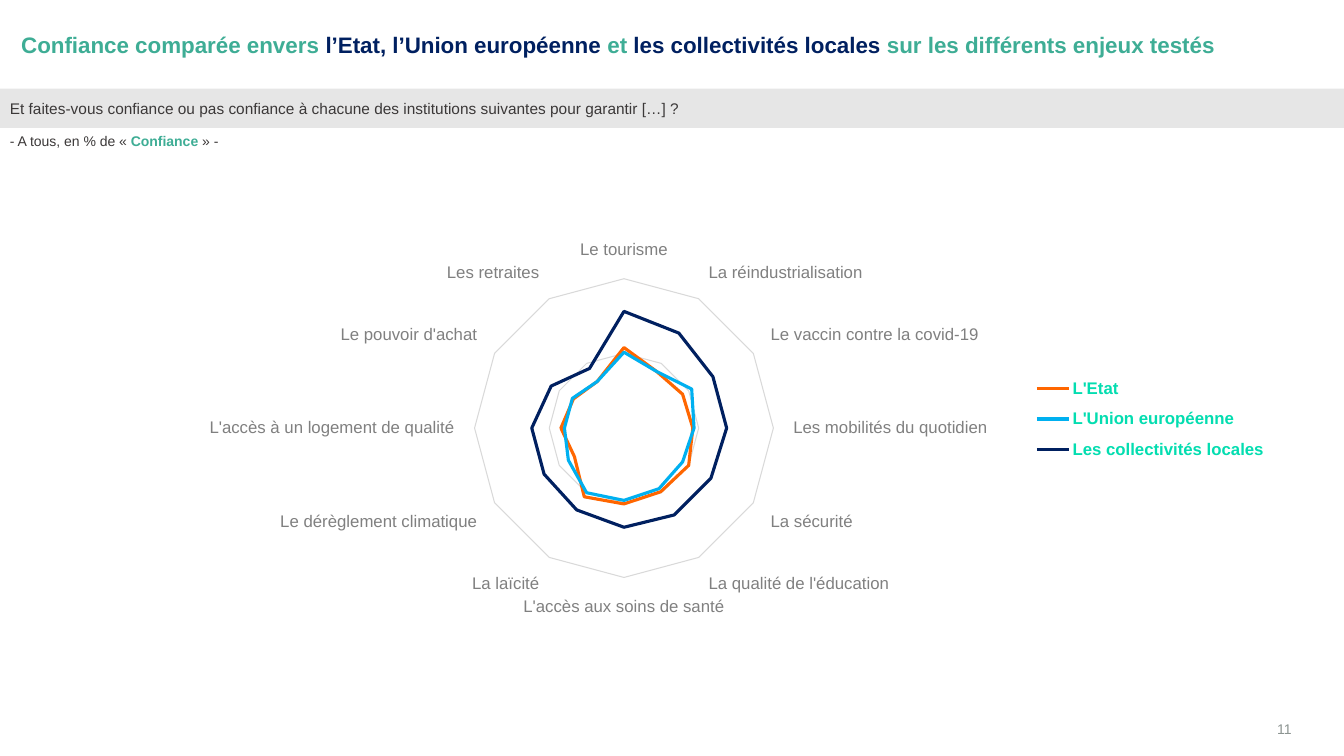
from lxml.etree import SubElement
from pptx import Presentation
from pptx.chart.data import CategoryChartData
from pptx.dml.color import RGBColor
from pptx.enum.chart import XL_CHART_TYPE, XL_LEGEND_POSITION, XL_TICK_MARK
from pptx.enum.shapes import MSO_SHAPE
from pptx.enum.text import MSO_ANCHOR, PP_ALIGN
from pptx.oxml.ns import qn
from pptx.util import Inches, Pt

FONT = "Arial"
GREEN, NAVY, DARK = "3EAD95", "002060", "3B3838"

TITLE = [
    ("Confiance comparée envers ", GREEN),
    ("l’Etat, l’Union européenne ", NAVY),
    ("et ", GREEN),
    ("les collectivités locales ", NAVY),
    ("sur les différents enjeux testés", GREEN),
]
QUESTION = "Et faites-vous confiance ou pas confiance à chacune des institutions suivantes pour garantir […] ?"
ISSUES = [
    "Le tourisme", "La réindustrialisation", "Le vaccin contre la covid-19",
    "Les mobilités du quotidien", "La sécurité", "La qualité de l'éducation",
    "L'accès aux soins de santé", "La laïcité", "Le dérèglement climatique",
    "L'accès à un logement de qualité", "Le pouvoir d'achat", "Les retraites",
]
INSTITUTIONS = [
    ("L'Etat", "FF6600", [69, 56, 58, 59, 64, 63, 65, 68, 49, 54, 50, 46]),
    ("L'Union européenne", "00B0F0", [65, 56, 67, 60, 58, 60, 62, 64, 55, 51, 51, 46]),
    ("Les collectivités locales", NAVY, [100, 94, 88, 88, 86, 86, 85, 81, 79, 79, 72, 59]),
]


def rgb(code):
    """Return the colour for a hex string."""
    return RGBColor.from_string(code)


def style(font, size, color, bold=False):
    """Format a font."""
    font.name, font.size, font.bold = FONT, Pt(size), bold
    font.color.rgb = rgb(color)


def set_frame(frame, anchor, margins):
    """Set wrapping, anchor and left, top, right, bottom margins in inches."""
    frame.word_wrap = True
    frame.vertical_anchor = anchor
    (frame.margin_left, frame.margin_top,
     frame.margin_right, frame.margin_bottom) = map(Inches, margins)


def add_runs(paragraph, pieces, size):
    """Append runs given as text, colour and weight."""
    for text, color, bold in pieces:
        run = paragraph.add_run()
        run.text = text
        style(run.font, size, color, bold)


def place_title(slide, box):
    """Fill the title placeholder with two-coloured text."""
    title = slide.shapes.title
    title.left, title.top, title.width, title.height = map(Inches, box)
    title.fill.solid()
    title.fill.fore_color.rgb = rgb("FFFFFF")
    white = title._element.spPr.find(qn("a:solidFill"))[0]
    SubElement(white, qn("a:alpha"), val="30000")
    set_frame(title.text_frame, MSO_ANCHOR.MIDDLE, (0.1, 0, 0, 0))
    heading = title.text_frame.paragraphs[0]
    heading.alignment = PP_ALIGN.LEFT
    add_runs(heading, [(text, color, True) for text, color in TITLE], 16)


def add_question(slide, box):
    """Draw the grey band with the survey question."""
    band = slide.shapes.add_shape(MSO_SHAPE.RECTANGLE, *map(Inches, box))
    band.shadow.inherit = False
    band.fill.solid()
    band.fill.fore_color.rgb = rgb("E6E6E6")
    band.line.fill.background()
    set_frame(band.text_frame, MSO_ANCHOR.MIDDLE, (0.1, 0.1, 0.2, 0.1))
    question = band.text_frame.paragraphs[0]
    question.alignment = PP_ALIGN.JUSTIFY
    add_runs(question, [(QUESTION, DARK, False)], 11)


def add_base(slide, box):
    """Write the line on who answered and what is measured."""
    base = slide.shapes.add_textbox(*map(Inches, box))
    set_frame(base.text_frame, MSO_ANCHOR.TOP, (0.1, 0.05, 0.1, 0.05))
    add_runs(base.text_frame.paragraphs[0], [
        ("- A tous, en % de « ", DARK, False),
        ("Confiance", GREEN, True),
        (" » -", DARK, False),
    ], 10)


def set_layout(parent, index, area, inner=False):
    """Place a chart part by fractions of the chart: x, y, w, h."""
    for old in parent.findall(qn("c:layout")):
        parent.remove(old)
    layout = SubElement(parent, qn("c:layout"))
    parent.insert(index, layout)
    manual = SubElement(layout, qn("c:manualLayout"))
    if inner:
        SubElement(manual, qn("c:layoutTarget"), val="inner")
    for mode in ("xMode", "yMode"):
        SubElement(manual, qn("c:" + mode), val="edge")
    for side, share in zip("xywh", area):
        SubElement(manual, qn("c:" + side), val=str(share))


def add_radar(slide, box):
    """Draw the radar chart of trust by issue and institution."""
    trust = CategoryChartData(number_format="##0")
    trust.categories = ISSUES
    for name, _, shares in INSTITUTIONS:
        trust.add_series(name, shares)
    chart = slide.shapes.add_chart(XL_CHART_TYPE.RADAR, *map(Inches, box), trust).chart
    chart.has_title = False
    style(chart.font, 10, "014537")
    for series, (_, color, _) in zip(chart.plots[0].series, INSTITUTIONS):
        series.format.line.color.rgb = rgb(color)
        series.format.line.width = Pt(2.25)
    chart.plots[0].vary_by_categories = False

    issues = chart.category_axis
    issues.has_major_gridlines = False
    issues.major_tick_mark = XL_TICK_MARK.NONE
    issues.format.line.color.rgb = rgb("BEFEF1")
    issues.format.line.width = Pt(0.75)
    style(issues.tick_labels.font, 12, "808080")

    scale = chart.value_axis
    scale.minimum_scale, scale.maximum_scale, scale.major_unit = 0, 128, 64
    scale.major_gridlines.format.line.color.rgb = rgb("D9D9D9")
    scale.major_gridlines.format.line.width = Pt(0.75)
    scale.visible = False

    chart.has_legend = True
    chart.legend.position = XL_LEGEND_POSITION.RIGHT
    chart.legend.include_in_layout = False
    style(chart.legend.font, 12, "03DDB0", True)
    set_layout(chart.legend._element, 1, (0.78, 0.39, 0.22, 0.19))
    plot_area = chart._chartSpace.chart.plotArea
    set_layout(plot_area, 0, (0.275, 0.23, 0.272, 0.543), inner=True)


def add_page_number(slide, box):
    """Write the page number."""
    number = slide.shapes.add_textbox(*map(Inches, box))
    set_frame(number.text_frame, MSO_ANCHOR.BOTTOM, (0, 0, 0, 0))
    page = number.text_frame.paragraphs[0]
    page.alignment = PP_ALIGN.RIGHT
    add_runs(page, [("11", "8C9491", False)], 10)


def main():
    """Build the slide and save it."""
    deck = Presentation()
    deck.slide_width, deck.slide_height = Inches(13.33), Inches(7.5)
    slide = deck.slides.add_slide(deck.slide_layouts[5])
    place_title(slide, (0.11, 0.09, 12.96, 0.71))
    add_question(slide, (0, 0.88, 13.33, 0.39))
    add_base(slide, (0, 1.27, 13.33, 0.24))
    add_radar(slide, (1.71, 1.51, 10.9, 5.46))
    add_page_number(slide, (12.22, 7.07, 0.59, 0.24))
    deck.save("out.pptx")


if __name__ == "__main__":
    main()
